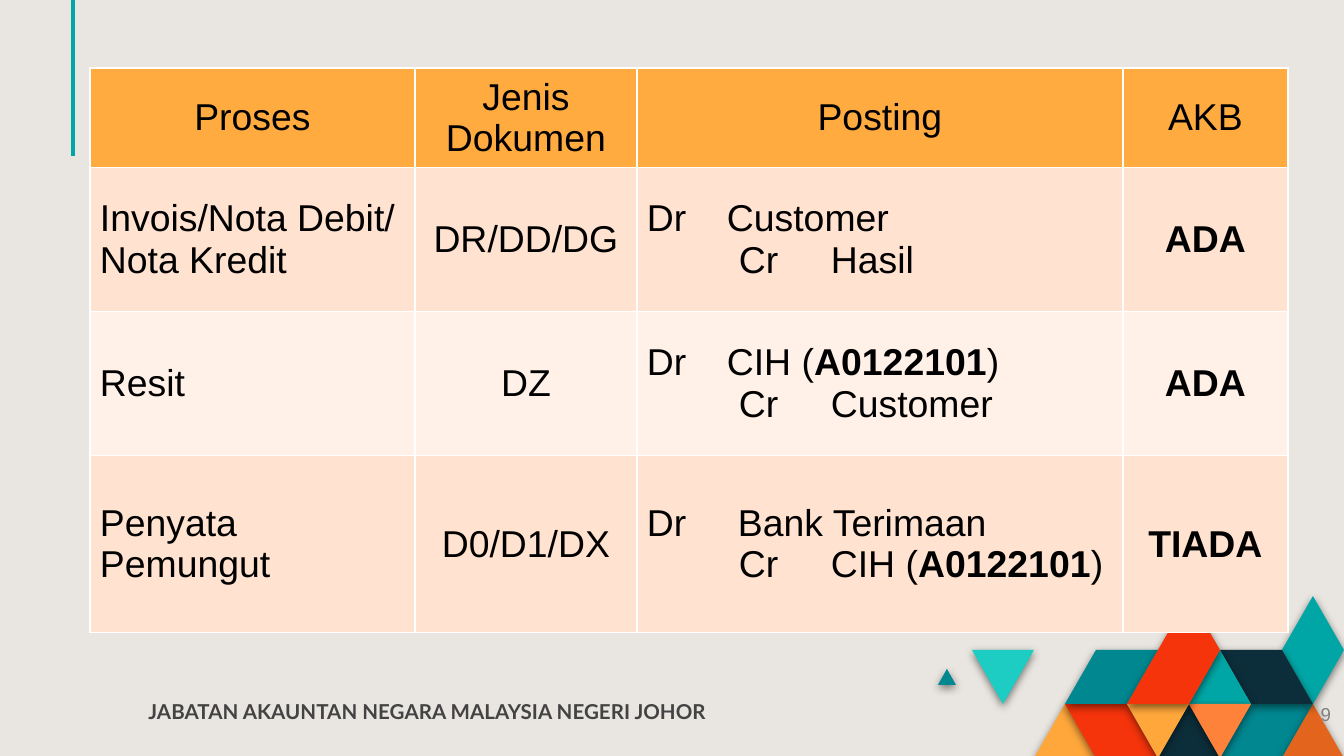
"""Build the slide on processes, document types, postings and AKB."""
from lxml.etree import SubElement
from pptx import Presentation
from pptx.dml.color import RGBColor
from pptx.enum.shapes import MSO_CONNECTOR
from pptx.enum.text import MSO_ANCHOR, PP_ALIGN
from pptx.oxml import parse_xml
from pptx.oxml.ns import nsdecls, qn
from pptx.util import Pt

PX = 9144000 / 1344
WIDTH, HEIGHT = 1344, 756

COLORS = {
    "background": "E9E6E1", "teal": "00A6A6", "deep teal": "018790",
    "aqua": "1DCDC3", "navy": "0C2E3A", "red": "F5340B",
    "amber": "FFA73B", "coral": "FF823B", "rust": "E3651D",
    "header": "FFAB40", "band dark": "FFE2CF", "band light": "FFF1E8",
    "border": "FFFFFF", "ink": "000000", "footer": "434343", "number": "808080",
}

ACCOUNT = "A0122101"
HEADINGS = ["Proses", "Jenis Dokumen", "Posting", "AKB"]
PROCESSES = [
    ["Invois/Nota Debit/ Nota Kredit", "DR/DD/DG",
     ["Dr\tCustomer", "\tCr\tHasil"], "ADA"],
    ["Resit", "DZ",
     ["Dr\tCIH (A0122101)", "\tCr\tCustomer"], "ADA"],
    ["Penyata Pemungut", "D0/D1/DX",
     ["Dr\tBank Terimaan", "\tCr\tCIH (A0122101)"], "TIADA"],
]
DEBIT_TABS = [80, 80, 91]
CREDIT_TABS = [92, 184]
COLUMN_WIDTHS = [325, 222, 486, 165]
ROW_HEIGHTS = [77, 144, 144, 177]
TABLE_LEFT, TABLE_TOP = 90, 68

MOSAIC_LEFT, MOSAIC_TOP, STEP_X, STEP_Y = 972, 596, 31, 54
MOSAIC = [
    ("amber", [(2, 3), (3, 2), (4, 3)]),
    ("red", [(3, 2), (5, 2), (6, 3), (4, 3)]),
    ("deep teal", [(8, 3), (9, 2), (11, 2), (10, 3)]),
    ("rust", [(10, 3), (11, 2), (12, 3)]),
    ("navy", [(6, 3), (7, 2), (8, 3)]),
    ("deep teal", [(3, 2), (4, 1), (6, 1), (5, 2)]),
    ("aqua", [(0, 1), (2, 1), (1, 2)]),
    ("teal", [(10, 1), (11, 0), (12, 1), (11, 2)]),
    ("navy", [(8, 1), (10, 1), (11, 2), (9, 2)]),
    ("teal", [(7, 2), (8, 1), (9, 2)]),
    ("coral", [(7, 2), (9, 2), (8, 3)]),
    ("amber", [(5, 2), (7, 2), (6, 3)]),
    ("red", [(5, 2), (7, 0), (8, 1), (7, 2)]),
]
SMALL_TRIANGLE = [(938, 685), (947, 669), (956, 685)]

LABELS = [
    ("9", (1263, 685, 81, 58), PP_ALIGN.RIGHT,
     {"name": "Arial", "size": Pt(10)}, "number"),
    ("JABATAN AKAUNTAN NEGARA MALAYSIA NEGERI JOHOR", (86, 675, 683, 73),
     PP_ALIGN.CENTER, {"name": "Lato", "size": Pt(11), "bold": True}, "footer"),
]


def px(length):
    return round(length * PX)


def rgb(color):
    return RGBColor.from_string(COLORS[color])


def apply(target, values):
    for attribute, value in values.items():
        setattr(target, attribute, value)


def margins(horizontal, vertical):
    return {"margin_left": px(horizontal), "margin_right": px(horizontal),
            "margin_top": px(vertical), "margin_bottom": px(vertical),
            "vertical_anchor": MSO_ANCHOR.MIDDLE}


def add_run(paragraph, text, font, color):
    run = paragraph.add_run()
    run.text = text
    apply(run.font, font)
    run.font.color.rgb = rgb(color)


def add_tile(slide, color, points):
    builder = slide.shapes.build_freeform(*points[0], scale=PX)
    builder.add_line_segments(points[1:], close=True)
    tile = builder.convert_to_shape()
    tile.fill.solid()
    tile.fill.fore_color.rgb = rgb(color)
    tile.line.fill.background()
    tile.shadow.inherit = False
    tile._element.spPr.find(qn("a:effectLst")).append(parse_xml(
        f'<a:outerShdw {nsdecls("a")} blurRad="57150" dist="19050" dir="5400000"'
        ' algn="bl" rotWithShape="0"><a:srgbClr val="000000">'
        '<a:alpha val="50000"/></a:srgbClr></a:outerShdw>'))


def add_accent(slide):
    accent = slide.shapes.add_connector(
        MSO_CONNECTOR.STRAIGHT, px(73), px(-235), px(73), px(156))
    accent.line.color.rgb = rgb("teal")
    accent.line.width = Pt(2.25)
    SubElement(accent._element.spPr, qn("a:effectLst"))


def add_label(slide, text, box, alignment, font, color):
    frame = slide.shapes.add_textbox(*map(px, box)).text_frame
    apply(frame, {"word_wrap": True, **margins(13, 13)})
    frame.paragraphs[0].alignment = alignment
    add_run(frame.paragraphs[0], text, font, color)


def set_tabs(paragraph, stops):
    tabs = SubElement(paragraph._p.get_or_add_pPr(), qn("a:tabLst"))
    for stop in stops:
        SubElement(tabs, qn("a:tab"), pos=str(px(stop)), algn="l")


def style_cell(cell, color):
    apply(cell, margins(10, 5))
    properties = cell._tc.get_or_add_tcPr()
    for side in "LRTB":
        properties.append(parse_xml(
            f'<a:ln{side} {nsdecls("a")} w="{Pt(1)}"><a:solidFill>'
            f'<a:srgbClr val="{COLORS["border"]}"/></a:solidFill></a:ln{side}>'))
    cell.fill.solid()
    cell.fill.fore_color.rgb = rgb(color)


def fill_cell(cell, content, row, column):
    lines = content if isinstance(content, list) else [content]
    centred = row == 0 or column in (1, 3)
    for index, line in enumerate(lines):
        frame = cell.text_frame
        paragraph = frame.add_paragraph() if index else frame.paragraphs[0]
        paragraph.alignment = PP_ALIGN.CENTER if centred else PP_ALIGN.LEFT
        if "\t" in line:
            set_tabs(paragraph, CREDIT_TABS if index else [DEBIT_TABS[row - 1]])
        for part in filter(None, line.partition(ACCOUNT)):
            bold = part == ACCOUNT or (row > 0 and column == 3)
            add_run(paragraph, part,
                    {"name": "Arial", "size": Pt(20), "bold": bold}, "ink")


def add_postings(slide):
    rows = [HEADINGS, *PROCESSES]
    table = slide.shapes.add_table(
        len(rows), len(HEADINGS), px(TABLE_LEFT), px(TABLE_TOP),
        px(sum(COLUMN_WIDTHS)), px(sum(ROW_HEIGHTS))).table
    for column, width in zip(table.columns, COLUMN_WIDTHS):
        column.width = px(width)
    for row, contents in enumerate(rows):
        table.rows[row].height = px(ROW_HEIGHTS[row])
        band = "band dark" if row % 2 else "band light"
        for column, content in enumerate(contents):
            cell = table.cell(row, column)
            style_cell(cell, band if row else "header")
            fill_cell(cell, content, row, column)


def main():
    deck = Presentation()
    apply(deck, {"slide_width": px(WIDTH), "slide_height": px(HEIGHT)})
    slide = deck.slides.add_slide(deck.slide_layouts[6])
    slide.background.fill.solid()
    slide.background.fill.fore_color.rgb = rgb("background")
    add_tile(slide, "deep teal", SMALL_TRIANGLE)
    for color, corners in MOSAIC:
        add_tile(slide, color, [(MOSAIC_LEFT + STEP_X * x, MOSAIC_TOP + STEP_Y * y)
                                for x, y in corners])
    add_accent(slide)
    page_number, footer = LABELS
    add_label(slide, *page_number)
    add_postings(slide)
    add_label(slide, *footer)
    deck.save("out.pptx")


if __name__ == "__main__":
    main()
